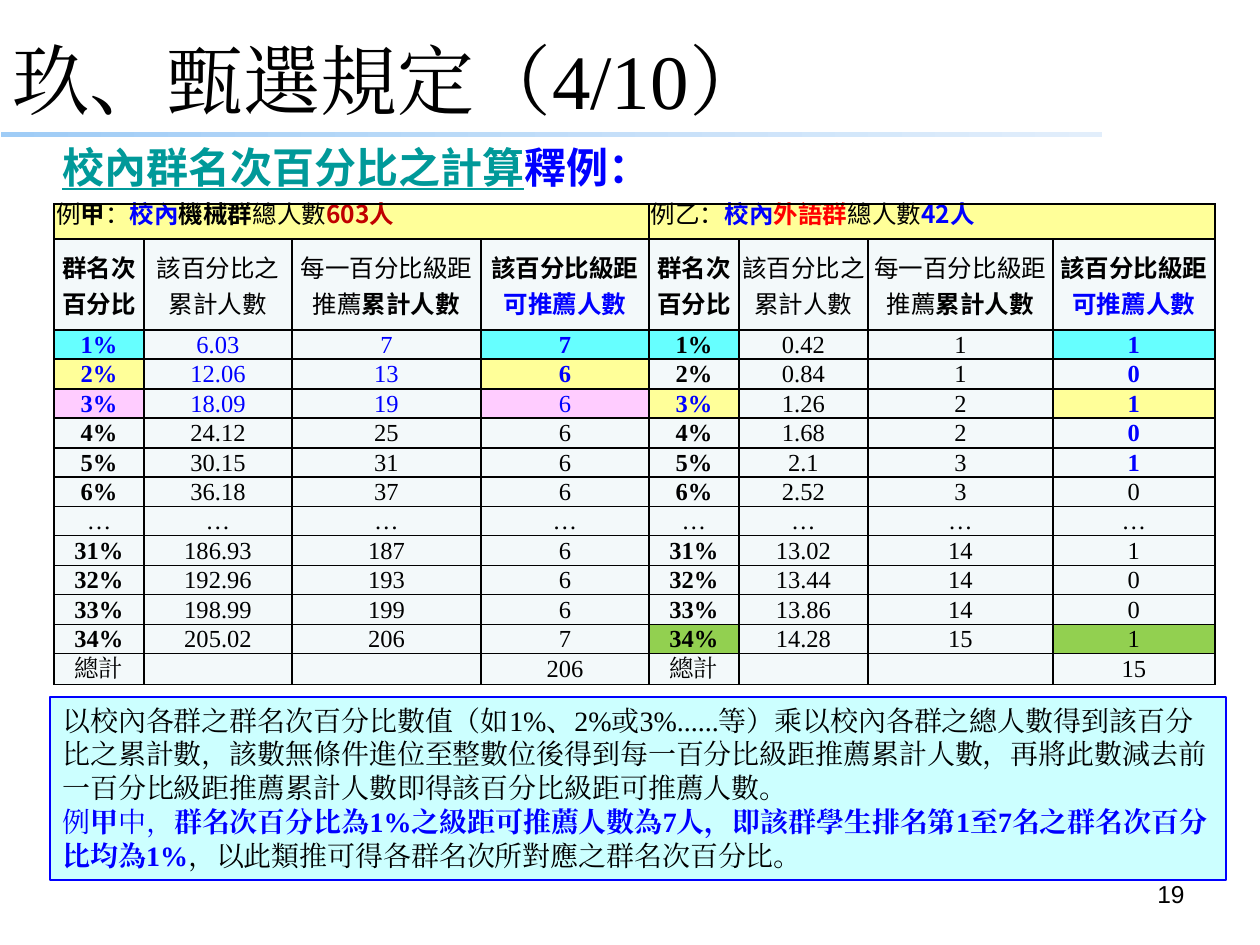
from lxml import etree
from pptx import Presentation
from pptx import util as u
from pptx.dml.color import RGBColor
from pptx.enum import shapes, text
from pptx.oxml.ns import qn

COLORS = {
    "black": "000000", "blue": "0000FF", "teal": "009999", "red": "FF0000",
    "crimson": "C00000", "cyan": "66FFFF", "yellow": "FFFF99", "pink": "FFCCFF",
    "green": "92D050", "pale": "F3F9FA", "note": "CCFFFF",
    "bar_start": "9FCCF6", "bar_end": "E2EEFB",
}
SERIF, SANS, PLAIN = "Times New Roman", "Noto Sans CJK SC", "Arial"
BREAK = ("\v",)


def px(length):
    return round(length * 914400 / 126)


def rgb(name):
    return RGBColor.from_string(COLORS[name])


class SlideBuilder:
    def __init__(self, deck):
        self.page = deck.slides.add_slide(deck.slide_layouts[5])

    def add_spans(self, para, spans, size, font, align=text.PP_ALIGN.LEFT, spacing=None):
        para.alignment = align
        if spacing:
            para.line_spacing = u.Pt(spacing)
        for content, *style in spans:
            if content == "\v":
                para.add_line_break()
                continue
            color, bold, underline = style + ["black", False, False][len(style):]
            span = para.add_run()
            span.text = content
            span.font.size = u.Pt(size)
            span.font.name = font
            span.font.bold = bold
            span.font.underline = underline
            span.font.color.rgb = rgb(color)
            latin = span.font._element.find(qn("a:latin"))
            latin.addnext(latin.makeelement(qn("a:ea"), {"typeface": font}))

    def title(self, content, left, top, width, height):
        box = self.page.shapes.title
        box.left, box.top, box.width, box.height = map(px, (left, top, width, height))
        box.text_frame.vertical_anchor = text.MSO_ANCHOR.MIDDLE
        self.add_spans(box.text_frame.paragraphs[0], [(content,)], 44, SERIF)

    def textbox(self, spans, left, top, width, height, size, font, align=text.PP_ALIGN.LEFT):
        box = self.page.shapes.add_textbox(*map(px, (left, top, width, height)))
        box.text_frame.word_wrap = True
        self.add_spans(box.text_frame.paragraphs[0], spans, size, font, align)

    def rectangle(self, left, top, width, height):
        box = self.page.shapes.add_shape(
            shapes.MSO_SHAPE.RECTANGLE, *map(px, (left, top, width, height)))
        box.shadow.inherit = False
        return box

    def gradient_bar(self, left, top, width, height):
        bar = self.rectangle(left, top, width, height)
        bar.line.fill.background()
        bar.fill.gradient()
        bar.fill.gradient_angle = 0
        for stop, name in zip(bar.fill.gradient_stops, ("bar_start", "bar_end")):
            stop.color.rgb = rgb(name)

    def note(self, paragraphs, left, top, width, height):
        box = self.rectangle(left, top, width, height)
        box.fill.solid()
        box.fill.fore_color.rgb = rgb("note")
        box.line.color.rgb = rgb("blue")
        box.line.width = u.Pt(0.75)
        frame = box.text_frame
        frame.word_wrap = True
        frame.vertical_anchor = text.MSO_ANCHOR.TOP
        for index, spans in enumerate(paragraphs):
            para = frame.add_paragraph() if index else frame.paragraphs[0]
            self.add_spans(para, spans, 16, SERIF, spacing=19.25)

    def table(self, left, top, columns, rows):
        frame = self.page.shapes.add_table(
            len(rows), len(columns), *map(px, (left, top, sum(columns), sum(rows))))
        grid = frame.table
        grid.first_row = grid.horz_banding = False
        for column, width in zip(grid.columns, columns):
            column.width = px(width)
        for row, height in zip(grid.rows, rows):
            row.height = px(height)
        return grid

    def cell(self, cell, spans, fill="pale", font=SERIF, align=text.PP_ALIGN.CENTER, spacing=None):
        cell.margin_left = cell.margin_right = px(2)
        cell.margin_top = cell.margin_bottom = 0
        cell.vertical_anchor = text.MSO_ANCHOR.MIDDLE
        properties = cell._tc.get_or_add_tcPr()
        for side in ("lnL", "lnR", "lnT", "lnB"):
            line = etree.SubElement(properties, qn(f"a:{side}"), w=str(u.Pt(1)))
            solid = etree.SubElement(line, qn("a:solidFill"))
            etree.SubElement(solid, qn("a:srgbClr"), val=COLORS["black"])
        cell.fill.solid()
        cell.fill.fore_color.rgb = rgb(fill)
        para = cell.text_frame.paragraphs[0]
        self.add_spans(para, spans, 14, font, align, spacing)
        if not spans:
            etree.SubElement(para._p, qn("a:endParaRPr"), sz="1400")


GROUPS = [
    [("例",), ("甲", "black", True), ("：",), ("校內", "blue", True),
     ("機械群", "black", True), ("總人數",), ("603人", "crimson", True)],
    [("例乙：",), ("校內", "blue", True), ("外語群", "red", True),
     ("總人數",), ("42人", "blue", True)],
]
HEADINGS = [
    [("群名次", "black", True), BREAK, ("百分比", "black", True)],
    [("該百分比之累計人數",)],
    [("每一百分比級距推薦",), ("累計人數", "black", True)],
    [("該百分比級距", "black", True), ("可推薦人數", "blue", True)],
]
RECORDS = [
    ("1%", "6.03", "7", "7", "1%", "0.42", "1", "1"),
    ("2%", "12.06", "13", "6", "2%", "0.84", "1", "0"),
    ("3%", "18.09", "19", "6", "3%", "1.26", "2", "1"),
    ("4%", "24.12", "25", "6", "4%", "1.68", "2", "0"),
    ("5%", "30.15", "31", "6", "5%", "2.1", "3", "1"),
    ("6%", "36.18", "37", "6", "6%", "2.52", "3", "0"),
    ("…",) * 8,
    ("31%", "186.93", "187", "6", "31%", "13.02", "14", "1"),
    ("32%", "192.96", "193", "6", "32%", "13.44", "14", "0"),
    ("33%", "198.99", "199", "6", "33%", "13.86", "14", "0"),
    ("34%", "205.02", "206", "7", "34%", "14.28", "15", "1"),
    ("總計", "", "", "206", "總計", "", "", "15"),
]
FILLS = {
    (0, 0): "cyan", (0, 3): "cyan", (0, 4): "cyan", (0, 7): "cyan",
    (1, 0): "yellow", (1, 3): "yellow", (2, 4): "yellow", (2, 7): "yellow",
    (2, 0): "pink", (2, 3): "pink", (10, 4): "green", (10, 7): "green",
}
NOTES = [
    [("以校內各群之群名次百分比數值（如1%、2%或3%......等）乘以校內各群之總人數得到該百分比之累計數，"
      "該數無條件進位至整數位後得到每一百分比級距推薦累計人數，"
      "再將此數減去前一百分比級距推薦累計人數即得該百分比級距可推薦人數。",)],
    [("例", "blue"), ("甲", "blue", True), ("中，", "blue"),
     ("群名次百分比為1%之級距可推薦人數為7人，即該群學生排名第1至7名之群名次百分比均為1%", "blue", True),
     ("，以此類推可得各群名次所對應之群名次百分比。",)],
]


def fill_table(builder, grid):
    for group, spans in enumerate(GROUPS):
        first = group * 4
        grid.cell(0, first).merge(grid.cell(0, first + 3))
        builder.cell(grid.cell(0, first), spans, "yellow", SANS, text.PP_ALIGN.LEFT, 10)
        for offset, heading in enumerate(HEADINGS):
            builder.cell(grid.cell(1, first + offset), heading, font=SANS)
    for row, record in enumerate(RECORDS):
        for column, value in enumerate(record):
            quota = column == 7 and row < 5
            blue = quota or (column < 4 and row < 3) or (row, column) == (2, 4)
            bold = quota or value.endswith("%") or (column == 3 and row < 2)
            spans = [(value, "blue" if blue else "black", bold)] if value else []
            builder.cell(grid.cell(row + 2, column), spans,
                         FILLS.get((row, column), "pale"), spacing=16)


def main():
    deck = Presentation()
    deck.slide_width, deck.slide_height = px(1260), px(945)
    builder = SlideBuilder(deck)
    builder.gradient_bar(1, 132, 1101, 5)
    builder.title("玖、甄選規定（4/10）", 0, 35, 1134, 87)
    builder.textbox([("校內群名次百分比之計算", "teal", True, True), ("釋例：", "blue", True)],
                    50, 135, 704, 63, 24, SANS)
    builder.note(NOTES, 50, 697, 1176, 183)
    builder.textbox([("19",)], 903, 873, 294, 66, 14, PLAIN, text.PP_ALIGN.RIGHT)
    grid = builder.table(54, 204, [90, 148, 189, 168, 90, 129, 185, 162],
                         [35, 91] + [29, 30] * 5 + [29, 31])
    fill_table(builder, grid)
    deck.save("out.pptx")


if __name__ == "__main__":
    main()
